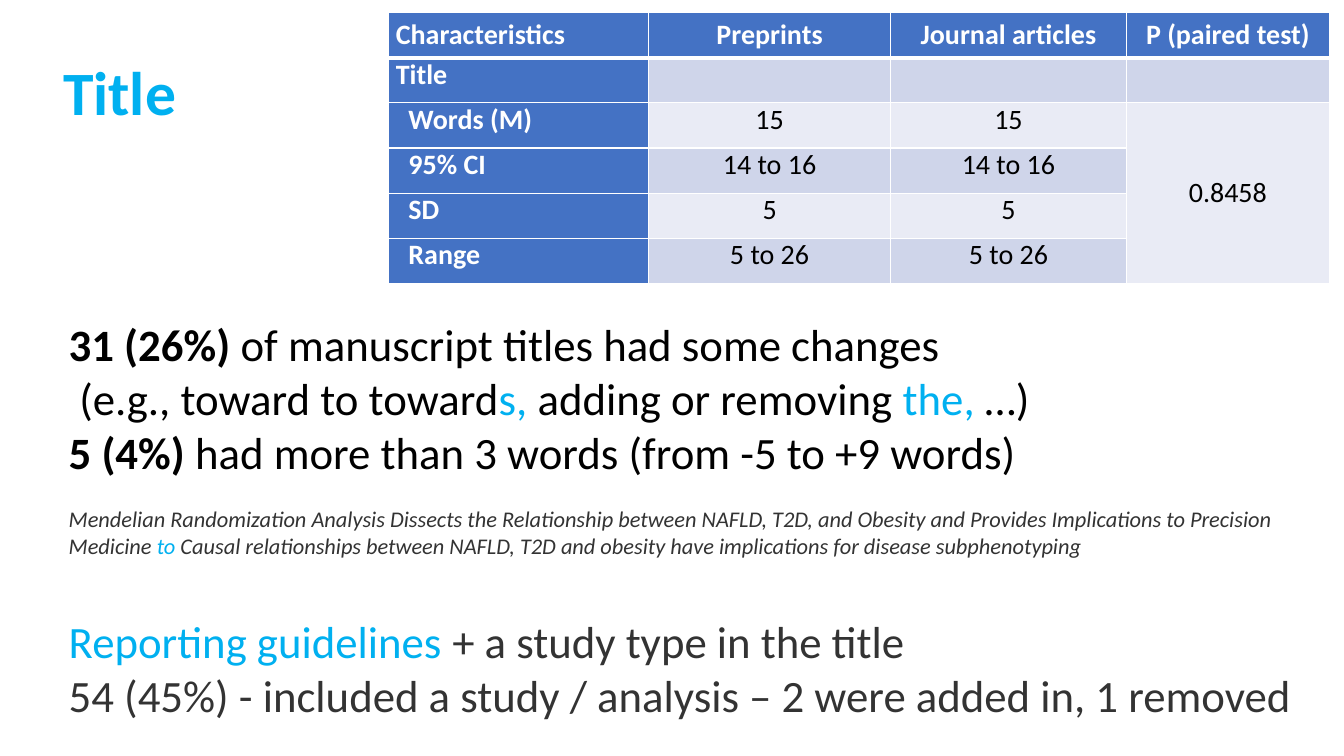
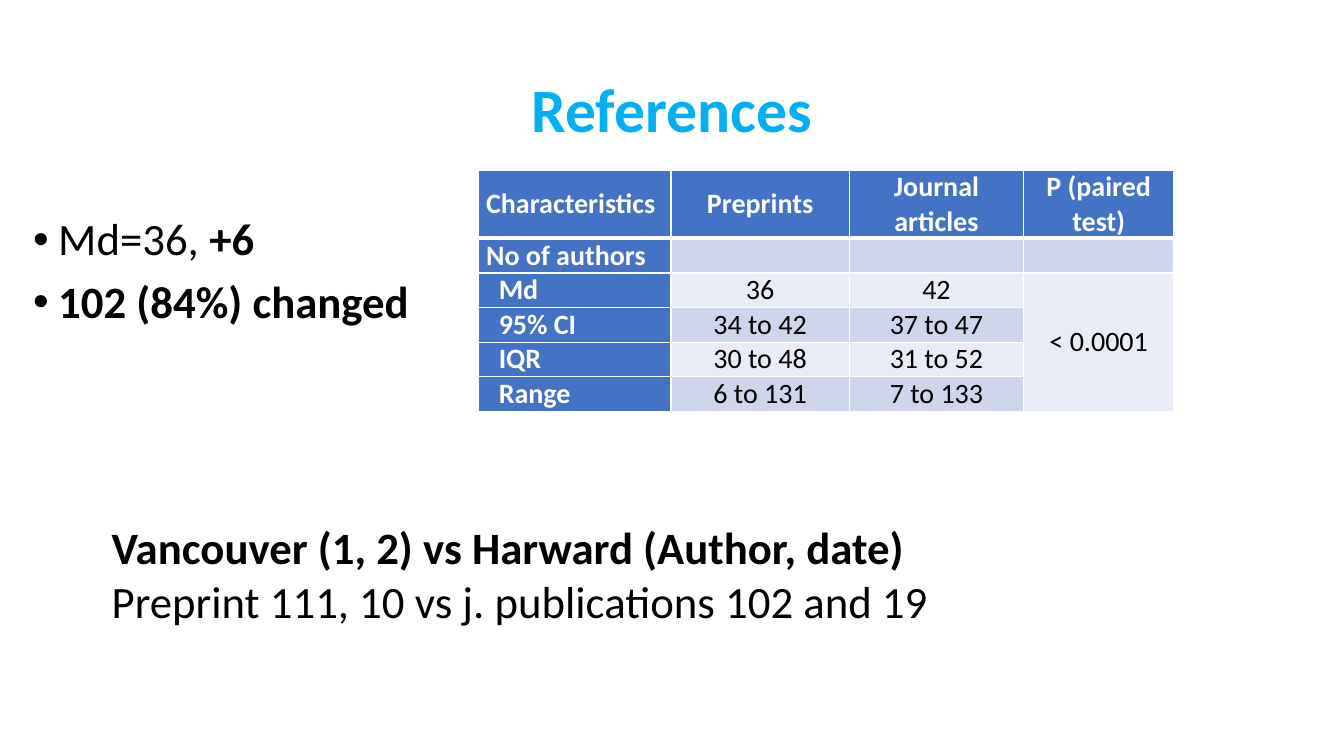
"""Build two slides comparing titles and references of preprints and journal articles."""
from lxml import etree
from pptx import Presentation
from pptx import util as u
from pptx.dml import color
from pptx.enum import text
from pptx.oxml import ns

PX = 9525
FONT = "Calibri"
COLORS = {
    "accent": "00B0F0",
    "ink": "000000",
    "grey": "333333",
    "head": "4472C4",
    "band_dark": "CFD5EA",
    "band_light": "E9EBF5",
    "white": "FFFFFF",
}
HEADINGS = ["Characteristics", "Preprints", "Journal articles", "P (paired test)"]
CENTER = text.PP_ALIGN.CENTER
MIDDLE = text.MSO_ANCHOR.MIDDLE


def px(length):
    return u.Emu(length * PX)


def rgb(name):
    return color.RGBColor.from_string(COLORS[name])


def style_run(run, size, ink="ink", bold=False, italic=False):
    font = run.font
    font.name, font.size = FONT, u.Pt(size)
    font.bold, font.italic = bold, italic
    font.color.rgb = rgb(ink)


def indent(paragraph, left, first=0):
    properties = paragraph._p.get_or_add_pPr()
    properties.set("marL", str(px(left)))
    properties.set("indent", str(px(first)))
    return properties


def add_bullet(paragraph):
    properties = indent(paragraph, 24, -24)
    etree.SubElement(properties, ns.qn("a:buFont")).set("typeface", "Arial")
    etree.SubElement(properties, ns.qn("a:buChar")).set("char", "•")


def add_lines(slide, box, lines, size=32):
    frame = slide.shapes.add_textbox(*map(px, box)).text_frame
    frame.word_wrap = True
    for number, line in enumerate(lines):
        paragraph = frame.add_paragraph() if number else frame.paragraphs[0]
        for words, look in line:
            run = paragraph.add_run()
            run.text = words
            style_run(run, **{"size": size, **look})
    return frame


def add_title(slide, box, words):
    frame = add_lines(slide, box, [[(words, {"ink": "accent", "bold": True})]], 44)
    frame.vertical_anchor = MIDDLE
    frame.paragraphs[0].alignment = CENTER
    frame.paragraphs[0].line_spacing = 0.9


def add_borders(cell, top, bottom):
    properties = cell._tc.get_or_add_tcPr()
    for side, width in (("L", 1), ("R", 1), ("T", top), ("B", bottom)):
        border = etree.SubElement(properties, ns.qn(f"a:ln{side}"), w=str(u.Pt(width)))
        fill = etree.SubElement(border, ns.qn("a:solidFill"))
        etree.SubElement(fill, ns.qn("a:srgbClr"), val=COLORS["white"])


def style_cell(cell, row, column):
    is_head = row == 0 or column == 0
    add_borders(cell, 3 if row == 1 else 1, 3 if row == 0 else 1)
    cell.fill.solid()
    band = "band_dark" if row % 2 else "band_light"
    cell.fill.fore_color.rgb = rgb("head" if is_head else band)
    cell.margin_left = cell.margin_right = px(7)
    cell.margin_top = cell.margin_bottom = 0
    if row == 0 or column == 3:
        cell.vertical_anchor = MIDDLE
    paragraph = cell.text_frame.paragraphs[0]
    if column:
        paragraph.alignment = CENTER
    elif row > 1:
        indent(paragraph, 12)
    paragraph.font.size = u.Pt(20)
    for run in paragraph.runs:
        style_run(run, 20, "white" if is_head else "ink", bold=is_head)


def add_comparison(slide, corner, widths, heights, topic, measures, p_value):
    rows = [HEADINGS, [topic, "", "", ""]] + [[*measure, ""] for measure in measures]
    rows[2][3] = p_value
    size = (sum(widths), sum(heights))
    table = slide.shapes.add_table(
        len(rows), len(HEADINGS), *map(px, corner + size)
    ).table
    for column, width in zip(table.columns, widths):
        column.width = px(width)
    for table_row, height in zip(table.rows, heights):
        table_row.height = px(height)
    for row, values in enumerate(rows):
        for column, value in enumerate(values):
            cell = table.cell(row, column)
            cell.text_frame.text = value
            style_cell(cell, row, column)
    table.cell(2, 3).merge(table.cell(len(rows) - 1, 3))


def build_title_slide(slide):
    accent, grey, bold = {"ink": "accent"}, {"ink": "grey"}, {"bold": True}
    quote = {"size": 16, "italic": True}
    add_title(slide, (24, 22, 180, 139), "Title")
    add_comparison(
        slide, (370, 12), (248, 230, 225, 193), (43,) * 6, "Title",
        [
            ("Words (M)", "15", "15"),
            ("95% CI", "14 to 16", "14 to 16"),
            ("SD", "5", "5"),
            ("Range", "5 to 26", "5 to 26"),
        ],
        "0.8458",
    )
    findings = add_lines(slide, (56, 297, 1210, 397), [
        [("31 (26%) ", bold), ("of manuscript titles had some changes", {})],
        [("(e.g., toward to toward", {}), ("s, ", accent),
         ("adding or removing ", {}), ("the, ", accent), ("…)", {})],
        [("5 (4%) ", bold), ("had more than 3 words (from -5 to +9 words)", {})],
        [("Mendelian Randomization Analysis Dissects the Relationship between NAFLD, "
          "T2D, and Obesity and Provides Implications to Precision Medicine ",
          {**quote, **grey}),
         ("to", {**quote, **accent}),
         (" Causal relationships between NAFLD, T2D and obesity have implications "
          "for disease subphenotyping", {**quote, **grey})],
        [("Reporting guidelines ", accent), ("+ a study type in the title", grey)],
        [("54 (45%) - included a study / analysis – 2 were added in, 1 removed", grey)],
    ])
    indent(findings.paragraphs[1], 10)
    findings.paragraphs[3].space_before = u.Pt(19.5)
    findings.paragraphs[4].space_before = u.Pt(39)


def build_references_slide(slide):
    bold = {"bold": True}
    add_title(slide, (88, 38, 1104, 139), "References")
    changes = add_lines(slide, (22, 202, 404, 147), [
        [("Md=36, ", {}), ("+6", bold)],
        [("102 (84%) changed", bold)],
    ])
    for paragraph in changes.paragraphs:
        paragraph.line_spacing = 0.9
        paragraph.space_before = u.Pt(10)
        add_bullet(paragraph)
    add_comparison(
        slide, (456, 162), (183, 170, 166, 143), (65,) + (33,) * 5, "No of authors",
        [
            ("Md", "36", "42"),
            ("95% CI", "34 to 42", "37 to 47"),
            ("IQR", "30 to 48", "31 to 52"),
            ("Range", "6 to 131", "7 to 133"),
        ],
        "< 0.0001",
    )
    add_lines(slide, (97, 490, 916, 113), [
        [("Vancouver (1, 2) vs Harward (Author, date)", bold)],
        [("Preprint 111, 10 vs j. publications 102 and 19", {})],
    ])


def main():
    deck = Presentation()
    deck.slide_width, deck.slide_height = px(1280), px(720)
    for build in (build_title_slide, build_references_slide):
        build(deck.slides.add_slide(deck.slide_layouts[6]))
    deck.save("out.pptx")


if __name__ == "__main__":
    main()
